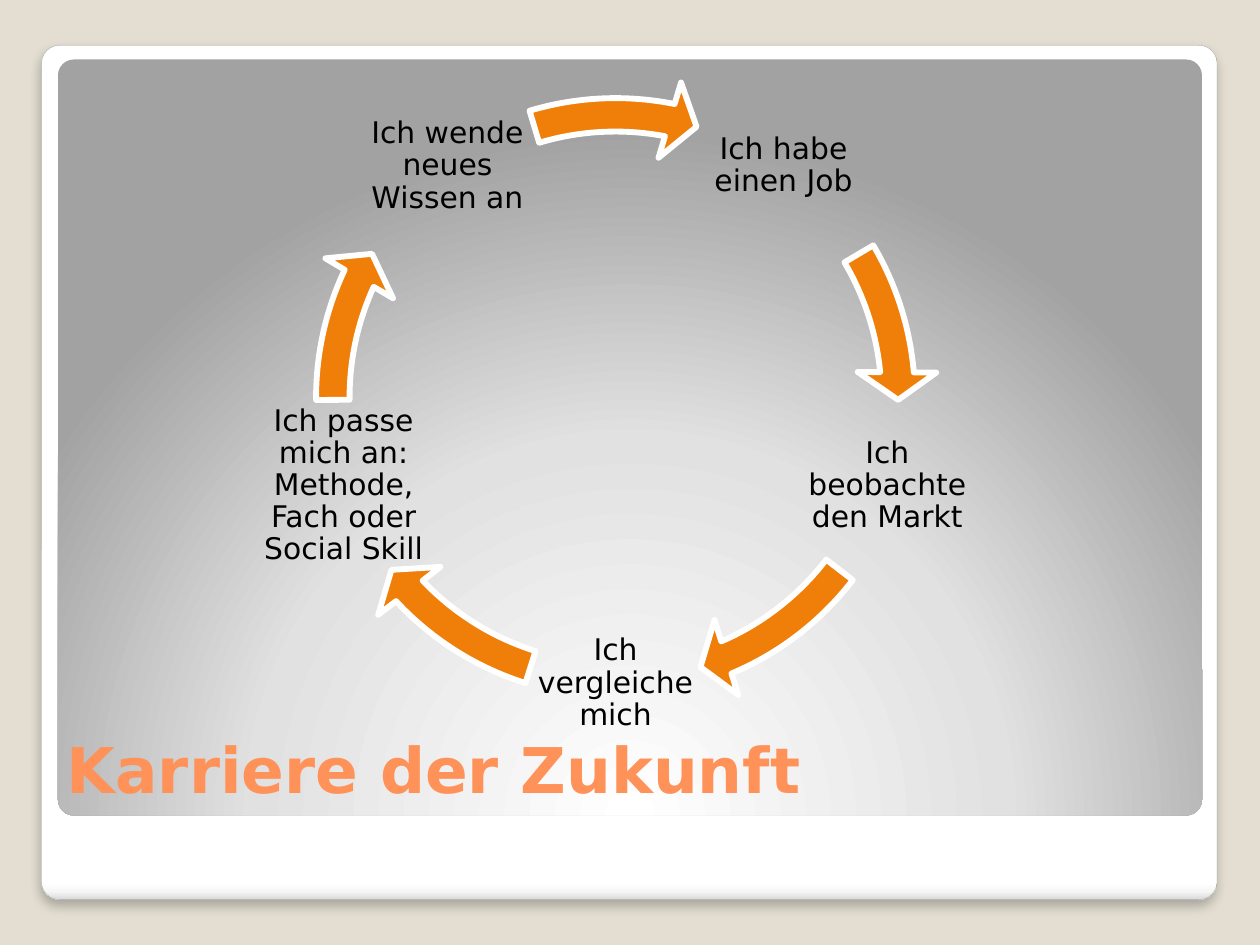
from dataclasses import dataclass
from math import cos, radians, sin

from lxml.etree import SubElement
from pptx import Presentation
from pptx.dml.color import RGBColor
from pptx.enum.shapes import MSO_SHAPE
from pptx.enum.text import MSO_ANCHOR, PP_ALIGN
from pptx.oxml import parse_xml
from pptx.oxml.ns import nsdecls, qn
from pptx.util import Inches, Pt


@dataclass(frozen=True)
class Theme:
    """Colours, font and type sizes of the slide."""
    back: str = "E3DED1"
    white: str = "FFFFFF"
    edge: str = "A4A4A4"
    title: str = "FF9258"
    ink: str = "000000"
    arrow: str = "F07F09"
    font: str = "DejaVu Sans"
    head: int = 36
    body: int = 17


THEME = Theme()
CARD = [(0, "FFFFFF"), (98, "FFFFFF"), (99, "F7F7F7"), (100, "DADADA")]
GLOW = [(0, "FFFFFF"), (55, "E1E1E1"), (100, "A2A2A2")]
DOWN = '<a:lin ang="5400000" scaled="0"/>'
ROUND = '<a:path path="circle"><a:fillToRect l="50000" t="175000" r="50000" b="-75000"/></a:path>'
STEPS = [
    ("Ich habe einen Job", 329.45, 354.88),
    ("Ich beobachte den Markt", 37.57, 66.9),
    ("Ich vergleiche mich", 107.5, 136.83),
    ("Ich passe mich an: Methode, Fach oder Social Skill", 179.52, 204.95),
    ("Ich wende neues Wissen an", 253.32, 281.08),
]


def inch(*sizes):
    """Turn inches into lengths."""
    return [Inches(size) for size in sizes]


def assign(item, values):
    """Set attributes from a dict."""
    for name, value in values.items():
        setattr(item, name, value)


def write(frame, text, font, para, body):
    """Put one formatted paragraph in a text frame."""
    assign(frame, {"word_wrap": True, **body})
    line = frame.paragraphs[0]
    assign(line, para)
    run = line.add_run()
    run.text = text
    color = font.pop("color")
    assign(run.font, {"name": THEME.font, **font})
    run.font.color.rgb = RGBColor.from_string(color)


def panel(slide, box, stops, shade):
    """Draw a rounded panel with a gradient."""
    shape = slide.shapes.add_shape(MSO_SHAPE.ROUNDED_RECTANGLE, *inch(*box))
    shape.adjustments[0] = 0.021
    shape.shadow.inherit = False
    shape.fill.background()
    shape.line.fill.background()
    marks = "".join(
        f'<a:gs pos="{at * 1000}"><a:srgbClr val="{color}"/></a:gs>' for at, color in stops)
    grad = parse_xml(
        f'<a:gradFill {nsdecls("a")} rotWithShape="1"><a:gsLst>{marks}</a:gsLst>{shade}</a:gradFill>')
    props = shape.element.spPr
    props.replace(props.find(qn("a:noFill")), grad)
    return shape


def card(slide, box):
    """Draw the white card with its edge and shadow."""
    shape = panel(slide, box, CARD, DOWN)
    shape.line.color.rgb = RGBColor.from_string(THEME.edge)
    shape.line.width = Pt(0.16)
    effects = shape.element.spPr.find(qn("a:effectLst"))
    shadow = SubElement(effects, qn("a:outerShdw"), blurRad=str(Pt(6)), dist=str(Pt(4)),
                        dir="5400000", algn="tl", rotWithShape="0")
    color = SubElement(shadow, qn("a:srgbClr"), val=THEME.ink)
    SubElement(color, qn("a:alpha"), val="25000")


def heading(slide, box, text):
    """Place the title in front of the panels."""
    title = slide.shapes.title
    title.element.getparent().append(title.element)
    assign(title, dict(zip(("left", "top", "width", "height"), inch(*box))))
    write(title.text_frame, text,
          {"size": Pt(THEME.head), "bold": True, "color": THEME.title},
          {"alignment": PP_ALIGN.LEFT},
          {"vertical_anchor": MSO_ANCHOR.BOTTOM, "margin_top": 0,
           "margin_bottom": Inches(0.63)})


def label(group, box, text):
    """Place the text of one step."""
    frame = group.shapes.add_textbox(*inch(*box)).text_frame
    sides = ("left", "top", "right", "bottom")
    write(frame, text, {"size": Pt(THEME.body), "color": THEME.ink},
          {"alignment": PP_ALIGN.CENTER, "line_spacing": 0.9},
          {"vertical_anchor": MSO_ANCHOR.MIDDLE,
           **{f"margin_{side}": Inches(0.02) for side in sides}})


def arc(group, box, start, end):
    """Draw a curved arrow between two angles in degrees."""
    shape = group.shapes.add_shape(MSO_SHAPE.CIRCULAR_ARROW, *inch(*box))
    for slot, value in enumerate((0.052, 3.36, end * 0.6, start * 0.6, 0.061)):
        shape.adjustments[slot] = value
    shape.shadow.inherit = False
    shape.fill.solid()
    shape.fill.fore_color.rgb = RGBColor.from_string(THEME.arrow)
    shape.line.color.rgb = RGBColor.from_string(THEME.white)
    shape.line.width = Pt(3.35)


def cycle(slide, box, steps):
    """Spread the steps evenly round a ring joined by arrows."""
    left, top, size, _ = box
    reach, side = size * 0.444, size * 0.266
    group = slide.shapes.add_group_shape()
    turn = 360 / len(steps)
    for place, (text, start, end) in enumerate(steps):
        angle = radians(place * turn - 90 + turn / 2)
        x = left + size / 2 + reach * cos(angle) - side / 2
        y = top + size / 2 + reach * sin(angle) - side / 2
        label(group, (x, y, side, side), text)
        arc(group, box, start, end)


def main():
    """Build and save the slide."""
    deck = Presentation()
    wide, high = 10, 7.5
    assign(deck, {"slide_width": Inches(wide), "slide_height": Inches(high)})
    slide = deck.slides.add_slide(deck.slide_layouts[5])
    slide.background.fill.solid()
    slide.background.fill.fore_color.rgb = RGBColor.from_string(THEME.back)
    card(slide, (wide * 0.033, high * 0.048, wide * 0.933, high * 0.904))
    panel(slide, (wide * 0.046, high * 0.063, wide * 0.908, high * 0.8), GLOW, ROUND)
    heading(slide, (wide * 0.043, high * 0.784, wide * 0.895, high * 0.153),
            "Karriere der Zukunft")
    cycle(slide, (wide * 0.233, high * 0.08, wide * 0.511, wide * 0.511), STEPS)
    deck.save("out.pptx")


if __name__ == "__main__":
    main()
